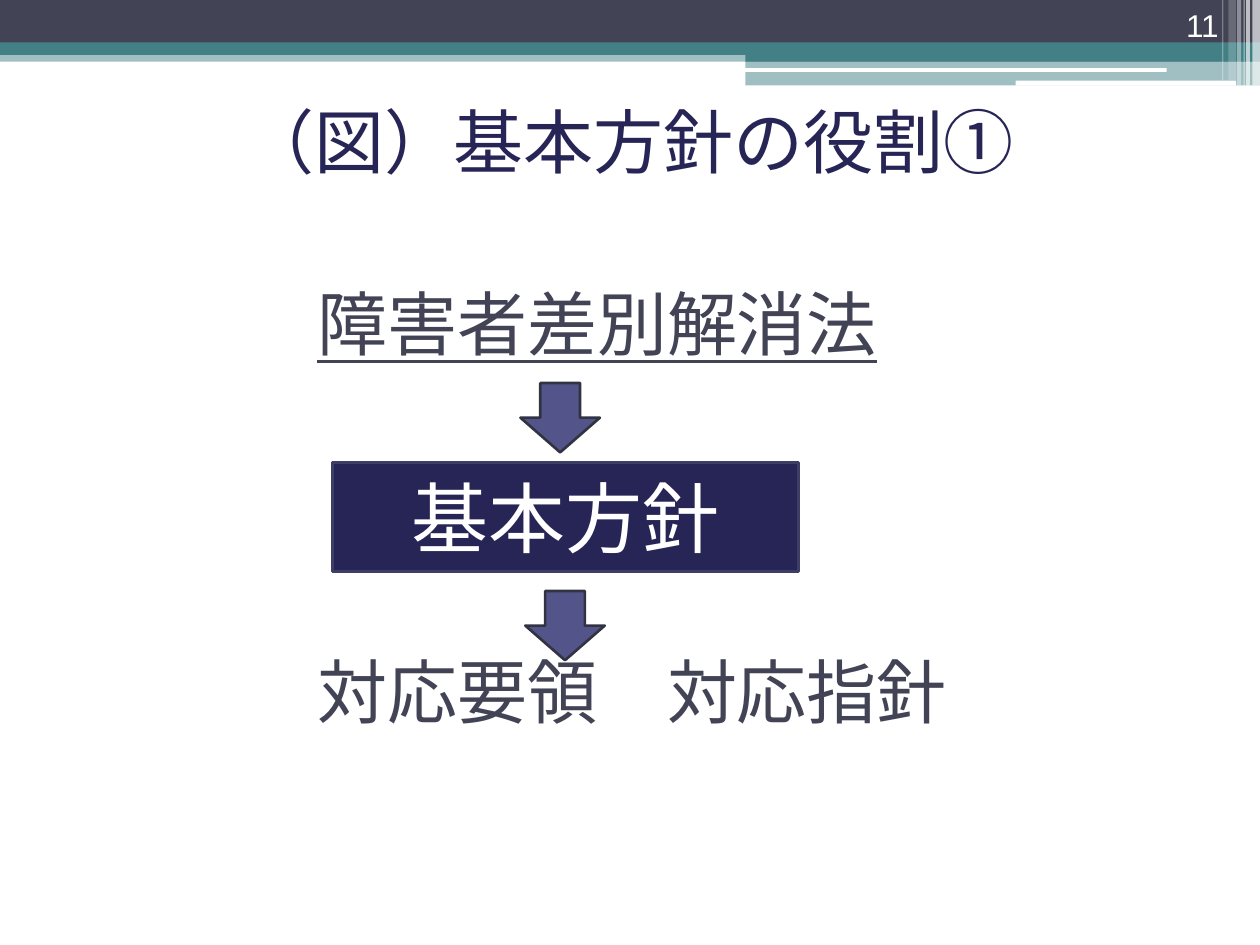
"""Build the slide showing the role of the basic policy between the law and its guidelines."""
from dataclasses import dataclass

from lxml import etree
from pptx import Presentation
from pptx.dml.color import RGBColor
from pptx.enum import lang, shapes, text
from pptx.oxml import ns
from pptx.util import Pt


@dataclass(frozen=True)
class Theme:
    font: str = "Arial"
    white: str = "FFFFFF"
    slate: str = "424456"
    teal: str = "438086"
    navy: str = "272555"
    navy_line: str = "3D3E66"
    arrow: str = "53548A"
    arrow_line: str = "323341"
    number_size: int = 18
    text_size: int = 40
    box_size: int = 44
    line_width: float = 1.5


THEME = Theme()
SHAPE = shapes.MSO_SHAPE
ALIGN = text.PP_ALIGN
ANCHOR = text.MSO_ANCHOR


def apply(target, formats):
    for name, value in formats.items():
        setattr(target, name, value)


def add_block(slide, kind, box, color, opacity=100, line=None):
    shape = slide.shapes.add_shape(kind, *map(Pt, box))
    shape.shadow.inherit = False
    shape.fill.solid()
    shape.fill.fore_color.rgb = RGBColor.from_string(color)
    if opacity < 100:
        color_element = shape.fill._xPr.find(".//" + ns.qn("a:srgbClr"))
        etree.SubElement(color_element, ns.qn("a:alpha"), val=str(opacity * 1000))
    if line:
        shape.line.color.rgb = RGBColor.from_string(line)
        shape.line.width = Pt(THEME.line_width)
    else:
        shape.line.fill.background()
    return shape


def write(shape, lines, size, color, align, anchor, margin_left=7.2):
    frame = shape.text_frame
    apply(frame, {"word_wrap": True, "vertical_anchor": anchor, "margin_left": Pt(margin_left)})
    for index, (words, space_before, underline) in enumerate(lines):
        paragraph = frame.add_paragraph() if index else frame.paragraphs[0]
        apply(paragraph, {"alignment": align, "space_before": Pt(space_before)})
        run = paragraph.add_run()
        run.text = words
        apply(run.font, {"name": THEME.font, "size": Pt(size), "underline": underline,
                         "language_id": lang.MSO_LANGUAGE_ID.JAPANESE})
        run.font.color.rgb = RGBColor.from_string(color)


def add_text(slide, box, *style, **options):
    write(slide.shapes.add_textbox(*map(Pt, box)), *style, **options)


def add_header(slide):
    bands = [
        ((0, 28.8, 720, 6.5), THEME.teal, 50),
        ((0, 0, 720, 24.5), THEME.slate, 100),
        ((0, 24.2, 720, 7.2), THEME.teal, 100),
        ((426, 28.1, 294, 7.2), THEME.teal, 100),
        ((426, 34.9, 294, 14), THEME.teal, 50),
    ]
    stripes = [
        (715.7, 4.3, 49, 65), (712.1, 2.2, 49, 65), (710.6, 0.7, 49, 60),
        (707, 2.2, 49, 40), (702, 4.3, 46, 20), (698.4, 0.7, 46, 30),
    ]
    for box, color, opacity in bands:
        add_block(slide, SHAPE.RECTANGLE, box, color, opacity)
    for box in ((425.5, 38.9, 241.2, 2.2), (580.3, 46.1, 126, 2.9)):
        add_block(slide, SHAPE.ROUNDED_RECTANGLE, box, THEME.white)
    for left, width, height, opacity in stripes:
        add_block(slide, SHAPE.RECTANGLE, (left, 0, width, height), THEME.white, opacity)


def main():
    presentation = Presentation()
    apply(presentation, {"slide_width": Pt(720), "slide_height": Pt(540)})
    slide = presentation.slides.add_slide(presentation.slide_layouts[6])
    add_header(slide)
    add_text(slide, (167, 157, 532.8, 329),
             [("障害者差別解消法", 6, True), ("対応要領　対応指針", 162, False)],
             THEME.text_size, THEME.slate, ALIGN.LEFT, ANCHOR.TOP, margin_left=14.4)
    add_text(slide, (20.2, 49, 678.2, 62), [("（図）基本方針の役割①", 0, False)],
             THEME.text_size, THEME.navy, ALIGN.CENTER, ANCHOR.MIDDLE)
    add_text(slide, (643.7, 0, 59.8, 28.8), [("11", 0, False)],
             THEME.number_size, THEME.white, ALIGN.RIGHT, ANCHOR.BOTTOM)
    policy = add_block(slide, SHAPE.RECTANGLE, (190, 264.2, 266.4, 62.6), THEME.navy,
                       line=THEME.navy_line)
    write(policy, [("基本方針", 0, False)], THEME.box_size, THEME.white,
          ALIGN.CENTER, ANCHOR.MIDDLE)
    for left, top in ((297.4, 218.9), (300.2, 337.7)):
        add_block(slide, SHAPE.DOWN_ARROW, (left, top, 45.4, 39.6), THEME.arrow,
                  line=THEME.arrow_line)
    presentation.save("out.pptx")


if __name__ == "__main__":
    main()
